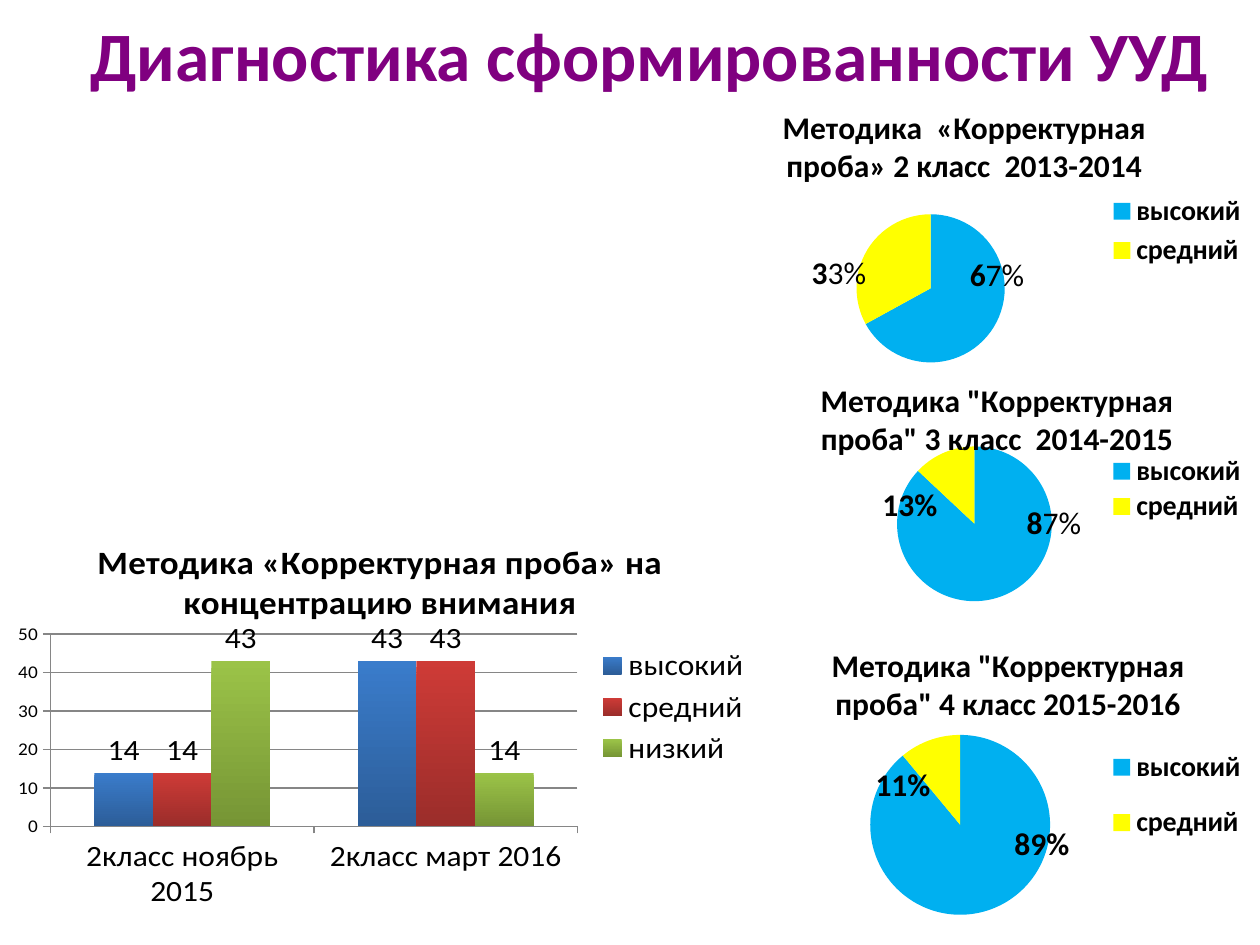
from dataclasses import dataclass
from math import cos, pi, sin

from lxml import etree
from pptx import Presentation
from pptx import util as u
from pptx.chart import data as cd
from pptx.dml.color import RGBColor
from pptx.enum import chart as ch, text
from pptx.oxml.ns import qn

PX = 914400 / 126
FONT = "Calibri"
COLORS = {"title": "800080", "text": "000000", "grid": "868686",
          "high": "00B0F0", "medium": "FFFF00"}
LEVELS = ["высокий", "средний", "низкий"]
BAR_GRADIENTS = [("3A7CCB", "2C5D98"), ("CE3B37", "9B2D2A"), ("9BC348", "769535")]


@dataclass
class Label:
    bold: str
    plain: str
    x: int  # centre on the slide, px
    y: int


@dataclass
class Pie:
    title: str
    box: tuple[int, int, int, int]
    plot: tuple[float, float, float, float]
    title_at: tuple[int, int]
    legend: tuple[int, int, int, int]
    shares: tuple[float, float]
    labels: tuple[Label, Label]  # in point order


PIES = [
    Pie('Методика "Корректурная проба" 3 класс  2014-2015', (689, 373, 571, 258),
        (0, 0.285, 1, 0.6), (815, 367), (1107, 453, 140, 72), (0.87, 0.13),
        (Label("13%", "", 910, 505), Label("8", "7%", 1054, 523))),
    Pie("Методика  «Корректурная проба» 2 класс  2013-2014", (699, 96, 561, 272),
        (0, 0.435, 0.826, 0.545), (777, 100), (1107, 189, 140, 84), (0.67, 0.33),
        (Label("3", "3%", 839, 273), Label("6", "7%", 997, 275))),
    Pie('Методика "Корректурная проба" 4 класс 2015-2016', (748, 638, 512, 307),
        (0, 0.316, 0.829, 0.586), (826, 634), (1107, 729, 140, 132), (0.89, 0.11),
        (Label("11%", "", 903, 785), Label("89%", "", 1042, 844))),
]


def px(n: float) -> u.Emu:
    return u.Emu(round(n * PX))


def rgb(name: str) -> RGBColor:
    return RGBColor.from_string(COLORS.get(name, name))


def style(font, size: float, bold: bool = False, color: str = "text") -> None:
    font.name, font.size, font.bold = FONT, u.Pt(size), bold
    font.color.rgb = rgb(color)


def write(tf, content: str, *, size: float, bold: bool = True, color: str = "text") -> None:
    """Add one formatted run to the first paragraph."""
    r = tf.paragraphs[0].add_run()
    r.text = content
    style(r.font, size, bold, color)


def set_layout(parent, index: int, inner: bool = False, edge: bool = True, **sizes: float) -> None:
    """Give a chart part a manual layout in fractions of the chart."""
    for old in parent.findall(qn("c:layout")):
        parent.remove(old)
    layout = etree.Element(qn("c:layout"))
    manual = etree.SubElement(layout, qn("c:manualLayout"))
    if inner:
        etree.SubElement(manual, qn("c:layoutTarget")).set("val", "inner")
    if edge:
        for mode in ("xMode", "yMode"):
            etree.SubElement(manual, qn(f"c:{mode}")).set("val", "edge")
    for key, value in sizes.items():
        etree.SubElement(manual, qn(f"c:{key}")).set("val", f"{value:.4f}")
    parent.insert(index, layout)


def add_chart(slide, kind, data, box, plot, title, title_at, title_size, legend, legend_font):
    """Add a chart with its title, plot area and legend in place."""
    left, top, width, height = box
    chart = slide.shapes.add_chart(kind, *map(px, box), data).chart
    style(chart.font, 11)
    chart.has_title = True
    write(chart.chart_title.text_frame, title, size=title_size)
    heading = chart.chart_title._element
    set_layout(heading, 1, x=(title_at[0] - left) / width, y=(title_at[1] - top) / height)
    heading.find(qn("c:overlay")).set("val", "1")
    chart.has_legend = True
    chart.legend.position = ch.XL_LEGEND_POSITION.RIGHT
    chart.legend.include_in_layout = False
    style(chart.legend.font, *legend_font)
    x, y, w, h = legend
    set_layout(chart.legend._element, 1, x=(x - left) / width, y=(y - top) / height,
               w=w / width, h=h / height)
    set_layout(chart._chartSpace.chart.plotArea, 0, inner=True, **dict(zip("xywh", plot)))
    return chart


def add_bars(slide) -> None:
    data = cd.CategoryChartData()
    data.categories = ["2класс ноябрь 2015", "2класс март 2016"]
    for level, values in zip(LEVELS, [(14, 43), (14, 43), (43, 14)]):
        data.add_series(level, values)
    chart = add_chart(slide, ch.XL_CHART_TYPE.COLUMN_CLUSTERED, data, (0, 532, 764, 377),
                      (0.066, 0.291, 0.69, 0.549),
                      "Методика «Корректурная проба» на концентрацию внимания",
                      (91, 533), 20, (593, 650, 160, 140), (18,))
    plot = chart.plots[0]
    plot.gap_width, plot.overlap, plot.vary_by_categories = 150, 0, False
    for series, gradient in zip(plot.series, BAR_GRADIENTS):
        fill = series.format.fill
        fill.gradient()
        fill.gradient_angle = 270
        for stop, color in zip(fill.gradient_stops, gradient):
            stop.color.rgb = rgb(color)
        labels = series.data_labels
        labels.show_value = True
        labels.position = ch.XL_LABEL_POSITION.OUTSIDE_END
        style(labels.font, 18)
    axis = chart.value_axis
    axis.minimum_scale, axis.maximum_scale, axis.major_unit = 0, 50, 10
    axis.major_gridlines.format.line.color.rgb = rgb("grid")
    for ax, size in ((axis, 11), (chart.category_axis, 18)):
        ax.major_tick_mark = ch.XL_TICK_MARK.OUTSIDE
        ax.format.line.color.rgb = rgb("grid")
        style(ax.tick_labels.font, size)


def add_pie(slide, pie: Pie) -> None:
    data = cd.CategoryChartData(number_format="0%")
    data.categories = LEVELS[:2]
    data.add_series("Series 1", pie.shares)
    chart = add_chart(slide, ch.XL_CHART_TYPE.PIE, data, pie.box, pie.plot, pie.title,
                      pie.title_at, 18, pie.legend, (16, True))
    plot = chart.plots[0]
    plot.vary_by_categories = True
    series = plot.series[0]
    series.data_labels.show_value = True
    series.data_labels.number_format = "0%"
    series.data_labels.number_format_is_linked = False
    style(series.data_labels.font, 18, True)
    left, top, width, height = pie.box
    fx, fy, fw, fh = pie.plot
    cx, cy = left + width * (fx + fw / 2), top + height * (fy + fh / 2)
    radius = min(width * fw, height * fh) / 2
    start = 0.0
    for i, (share, label, color) in enumerate(zip(pie.shares, pie.labels, ("high", "medium"))):
        point = series.points[i]
        point.format.fill.solid()
        point.format.fill.fore_color.rgb = rgb(color)
        # Labels are shifted from the middle of their slice
        angle = 2 * pi * (start + share / 2)
        start += share
        tf = point.data_label.text_frame
        write(tf, label.bold, size=18)
        if label.plain:
            write(tf, label.plain, size=18, bold=False)
        point.data_label.position = ch.XL_LABEL_POSITION.CENTER
        set_layout(point.data_label._dLbl, 1, edge=False,
                   x=(label.x - cx - radius / 2 * sin(angle)) / width,
                   y=(label.y - cy + radius / 2 * cos(angle)) / height)


def main() -> None:
    prs = Presentation()
    prs.slide_width, prs.slide_height = u.Inches(10), u.Inches(7.5)
    slide = prs.slides.add_slide(prs.slide_layouts[5])

    # Heading
    sp = slide.shapes.title
    sp.left, sp.top, sp.width, sp.height = map(px, (64, 0, 1171, 107))
    tf = sp.text_frame
    tf.vertical_anchor = text.MSO_ANCHOR.MIDDLE
    tf.paragraphs[0].alignment = text.PP_ALIGN.CENTER
    write(tf, "Диагностика сформированности УУД", size=39.6, color="title")

    # Charts
    add_bars(slide)
    for pie in PIES:
        add_pie(slide, pie)
    prs.save("out.pptx")


if __name__ == "__main__":
    main()
